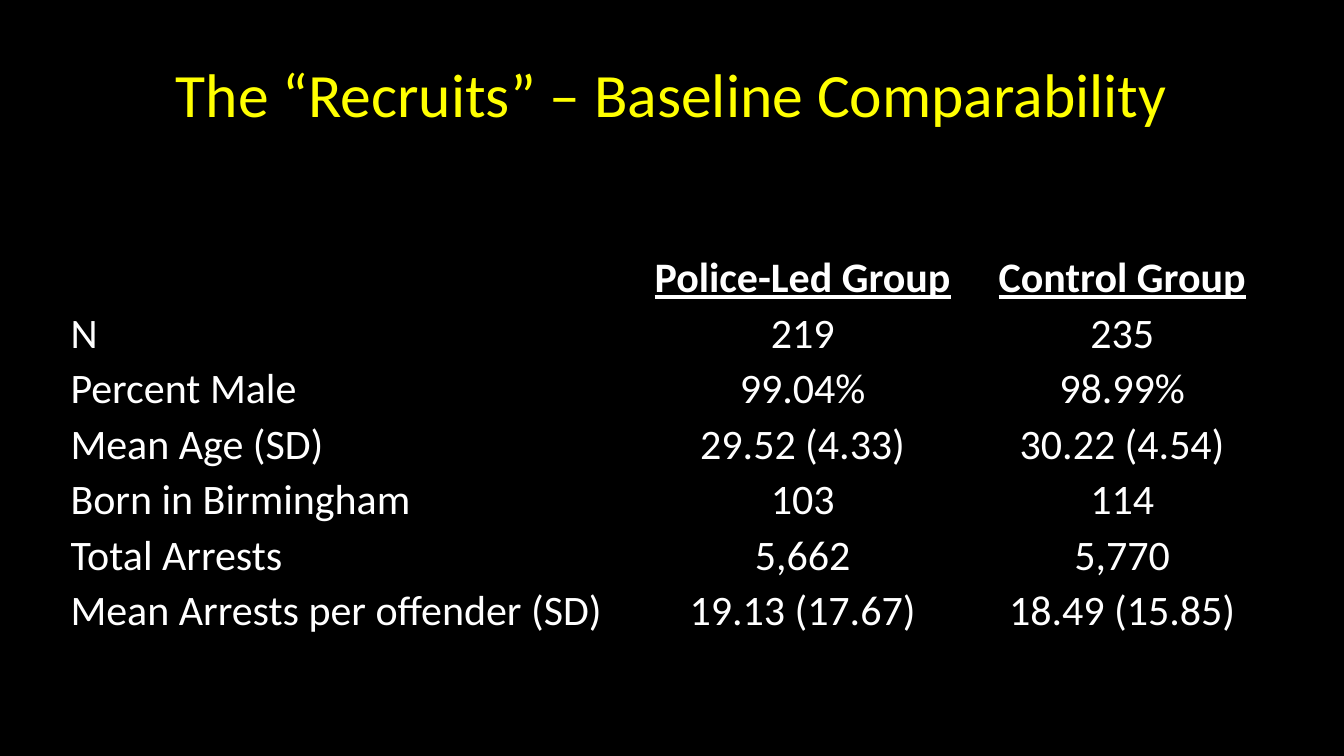
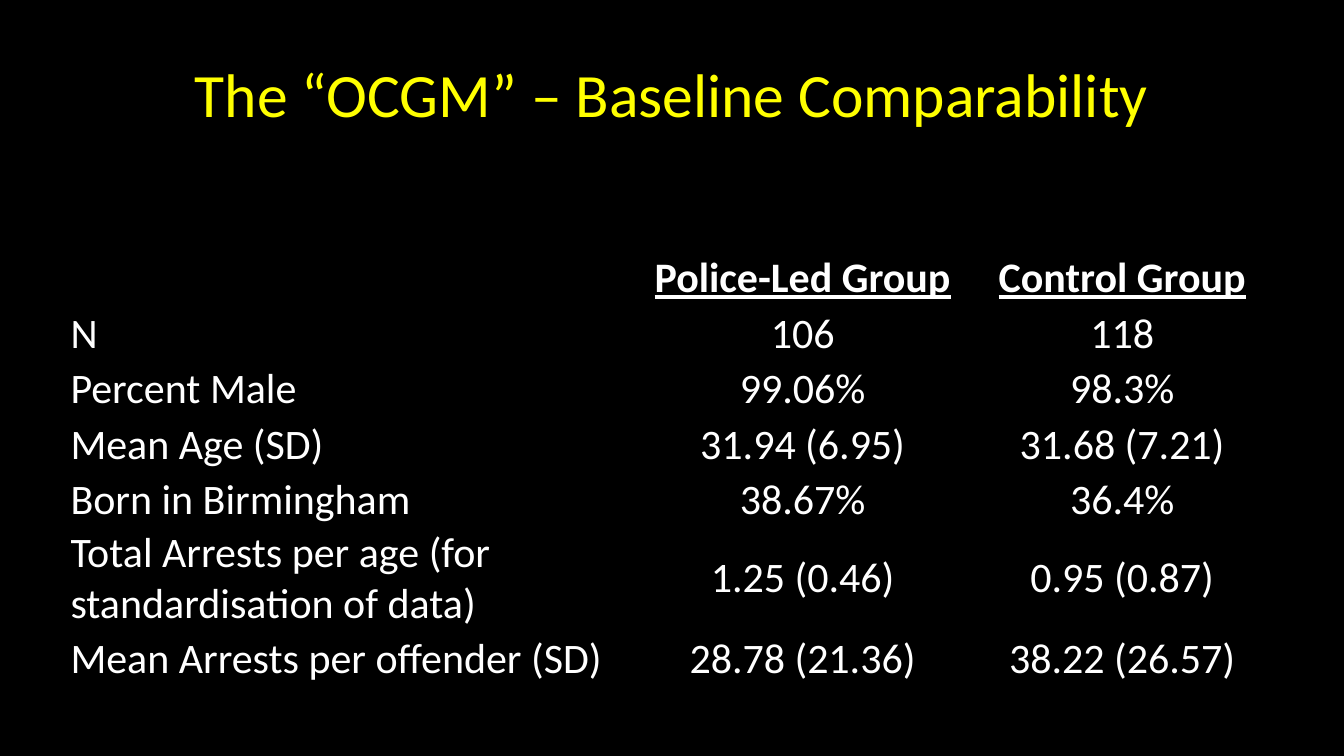
import dataclasses

import pptx
import pptx.dml.color
import pptx.enum.text
import pptx.util

Pt = pptx.util.Pt
RGB = pptx.dml.color.RGBColor
ALIGN = pptx.enum.text.PP_ALIGN
ANCHOR = pptx.enum.text.MSO_ANCHOR


# Shared look: colours, type sizes and places, all lengths in points
@dataclasses.dataclass(frozen=True)
class Theme:
    font: str = "Calibri"
    background: RGB = RGB(0x00, 0x00, 0x00)
    title_color: RGB = RGB(0xFF, 0xFF, 0x00)
    text_color: RGB = RGB(0xFF, 0xFF, 0xFF)
    title_size: int = 44
    table_size: int = 30
    slide_size: tuple = (960, 540)
    title_box: tuple = (48, 21.6, 864, 90)
    table_origin: tuple = (49.7, 180)
    column_widths: tuple = (388, 271.5, 185)
    header_height: float = 37
    row_height: float = 39.64
    wrapped_height: float = 74
    cell_inset: float = 0.7


THEME = Theme()
NO_GRID_STYLE = "{2D5ABB26-0587-4C30-8999-92F81FD0307C}"
HEADER = ("", "Police-Led Group", "Control Group")

RECRUITS = [
    ("N", "219", "235"),
    ("Percent Male", "99.04%", "98.99%"),
    ("Mean Age (SD)", "29.52 (4.33)", "30.22 (4.54)"),
    ("Born in Birmingham", "103", "114"),
    ("Total Arrests", "5,662", "5,770"),
    ("Mean Arrests per offender (SD)", "19.13 (17.67)", "18.49 (15.85)"),
]
OCGM = [
    ("N", "106", "118"),
    ("Percent Male", "99.06%", "98.3%"),
    ("Mean Age (SD)", "31.94 (6.95)", "31.68 (7.21)"),
    ("Born in Birmingham", "38.67%", "36.4%"),
    ("Total Arrests per age (for standardisation of data)",
     "1.25 (0.46)", "0.95 (0.87)"),
    ("Mean Arrests per offender (SD)", "28.78 (21.36)", "38.22 (26.57)"),
]


def format_text(frame, text, size, color, align, heading=False):
    frame.text = text
    paragraph = frame.paragraphs[0]
    paragraph.alignment = align
    for font in [paragraph.font] + [run.font for run in paragraph.runs]:
        font.name = THEME.font
        font.size = Pt(size)
        font.color.rgb = color
        font.bold = font.underline = heading


def add_title(slide, text):
    title = slide.shapes.title
    title.left, title.top, title.width, title.height = map(Pt, THEME.title_box)
    title.text_frame.vertical_anchor = ANCHOR.MIDDLE
    format_text(title.text_frame, text, THEME.title_size, THEME.title_color,
                ALIGN.CENTER)


def fill_cell(cell, text, align, anchor, heading):
    cell.fill.background()
    cell.margin_left = cell.margin_right = cell.margin_top = Pt(THEME.cell_inset)
    cell.margin_bottom = 0
    cell.vertical_anchor = anchor
    format_text(cell.text_frame, text, THEME.table_size, THEME.text_color,
                align, heading)


def add_comparison(slide, measures, wrapped_row=None):
    rows = [HEADER] + measures
    heights = [THEME.header_height] + [THEME.row_height] * len(measures)
    if wrapped_row is not None:
        heights[wrapped_row] = THEME.wrapped_height
    frame = slide.shapes.add_table(
        len(rows), len(HEADER), *map(Pt, THEME.table_origin),
        Pt(sum(THEME.column_widths)), Pt(sum(heights)))
    table = frame.table

    # Plain table without bands or grid lines
    table.horz_banding = table.first_row = False
    table._tbl.tblPr[0].text = NO_GRID_STYLE

    for column, width in zip(table.columns, THEME.column_widths):
        column.width = Pt(width)
    for r, (values, height) in enumerate(zip(rows, heights)):
        table.rows[r].height = Pt(height)
        for c, value in enumerate(values):
            centred = c > 0 and r == wrapped_row
            fill_cell(table.cell(r, c), value,
                      ALIGN.CENTER if c else ALIGN.LEFT,
                      ANCHOR.MIDDLE if centred else ANCHOR.BOTTOM,
                      heading=r == 0)


def add_comparison_slide(deck, title, measures, wrapped_row=None):
    slide = deck.slides.add_slide(deck.slide_layouts.get_by_name("Title Only"))
    add_title(slide, title)
    add_comparison(slide, measures, wrapped_row)


def main():
    deck = pptx.Presentation()
    deck.slide_width, deck.slide_height = map(Pt, THEME.slide_size)

    # Background for every slide
    fill = deck.slide_master.background.fill
    fill.solid()
    fill.fore_color.rgb = THEME.background

    add_comparison_slide(deck, "The “Recruits” – Baseline Comparability", RECRUITS)
    add_comparison_slide(deck, "The “OCGM” – Baseline Comparability", OCGM,
                         wrapped_row=5)
    deck.save("out.pptx")


if __name__ == "__main__":
    main()
